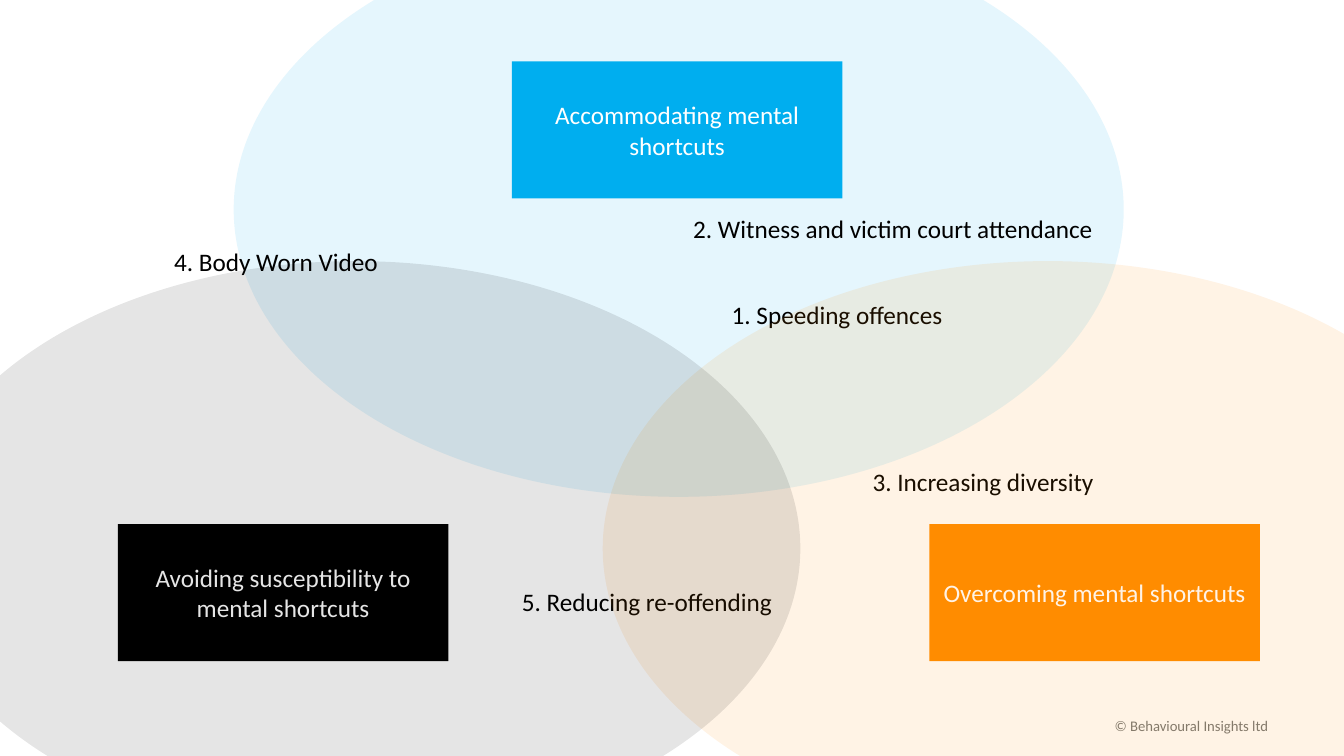
import pptx
import pptx.util
import pptx.dml.color
import pptx.enum.shapes
import pptx.enum.text
import pptx.oxml
import pptx.oxml.ns
from dataclasses import dataclass

Cm = pptx.util.Cm
Align = pptx.enum.text.PP_ALIGN
Shape = pptx.enum.shapes.MSO_SHAPE


@dataclass(frozen=True)
class Theme:
    font: str = "Calibri"
    blue: str = "00AEEF"
    black: str = "000000"
    orange: str = "FF8C00"
    white: str = "FFFFFF"
    grey: str = "777877"
    body: float = 18
    small: float = 10.5
    tint: int = 10


theme = Theme()

WIDE, HIGH = 33.87, 19.05
OVAL = 22.43, 14.48
PANEL = 8.33, 3.45
OVALS = {
    theme.blue: (5.89, -1.96),
    theme.orange: (15.19, 6.58),
    theme.black: (-2.26, 6.58),
}
PANELS = [
    ("Accommodating mental shortcuts", theme.blue, (12.9, 1.55)),
    ("Avoiding susceptibility to mental shortcuts", theme.black, (2.97, 13.21)),
    ("Overcoming mental shortcuts", theme.orange, (23.42, 13.21)),
]
NOTES = [
    ("3. Increasing diversity", (21.74, 11.63, 6.71)),
    ("1. Speeding offences", (18.19, 7.42, 6.53)),
    ("5. Reducing re-offending", (12.9, 14.66, 7.52)),
    ("2. Witness and victim court attendance", (17.22, 5.26, 11.53)),
    ("4. Body Worn Video", (4.14, 6.07, 6.2)),
]


def paint(text):
    return pptx.dml.color.RGBColor.from_string(text)


def write(shape, text, size=theme.body, color=theme.black,
          align=Align.LEFT, wrap=True, grow=False):
    frame = shape.text_frame
    frame.word_wrap = wrap
    if grow:
        frame.auto_size = pptx.enum.text.MSO_AUTO_SIZE.SHAPE_TO_FIT_TEXT
    line = frame.paragraphs[0]
    line.alignment = align
    run = line.add_run()
    run.text = text
    run.font.name = theme.font
    run.font.size = pptx.util.Pt(size)
    run.font.color.rgb = paint(color)


def block(slide, kind, box, color):
    shape = slide.shapes.add_shape(kind, *map(Cm, box))
    shape.shadow.inherit = False
    shape.fill.solid()
    shape.fill.fore_color.rgb = paint(color)
    shape.line.fill.background()
    return shape


def oval(slide, box, color):
    shape = block(slide, Shape.OVAL, box, color)
    tone = shape.fill._xPr.find(".//" + pptx.oxml.ns.qn("a:srgbClr"))
    alpha = pptx.oxml.parse_xml(
        f'<a:alpha {pptx.oxml.ns.nsdecls("a")} val="{theme.tint * 1000}"/>')
    tone.append(alpha)


def panel(slide, box, text, color):
    shape = block(slide, Shape.RECTANGLE, box, color)
    shape.text_frame.vertical_anchor = pptx.enum.text.MSO_ANCHOR.MIDDLE
    write(shape, text, color=theme.white, align=Align.CENTER)


def note(slide, box, text):
    shape = slide.shapes.add_textbox(*map(Cm, box))
    write(shape, text, wrap=False, grow=True)


def footer(slide, box):
    left, top, wide, high = box
    width, height = 10.87, 0.71
    place = left + wide - width - 1.66, top + high - height - 0.41
    shape = slide.shapes.add_textbox(*map(Cm, (*place, width, height)))
    write(shape, "© Behavioural Insights ltd", size=theme.small,
          color=theme.grey, align=Align.RIGHT, grow=True)


def venn(slide, box):
    left, top = box[:2]

    def at(spot, size):
        return left + spot[0], top + spot[1], *size

    oval(slide, at(OVALS[theme.blue], OVAL), theme.blue)
    for text, color, spot in PANELS:
        panel(slide, at(spot, PANEL), text, color)
    for text, (x, y, width) in NOTES:
        note(slide, at((x, y), (width, 1.02)), text)
    for color in (theme.orange, theme.black):
        oval(slide, at(OVALS[color], OVAL), color)


def main():
    deck = pptx.Presentation()
    deck.slide_width, deck.slide_height = Cm(WIDE), Cm(HIGH)
    slide = deck.slides.add_slide(deck.slide_layouts[6])
    page = 0, 0, WIDE, HIGH
    footer(slide, page)
    venn(slide, page)
    deck.save("out.pptx")


if __name__ == "__main__":
    main()
